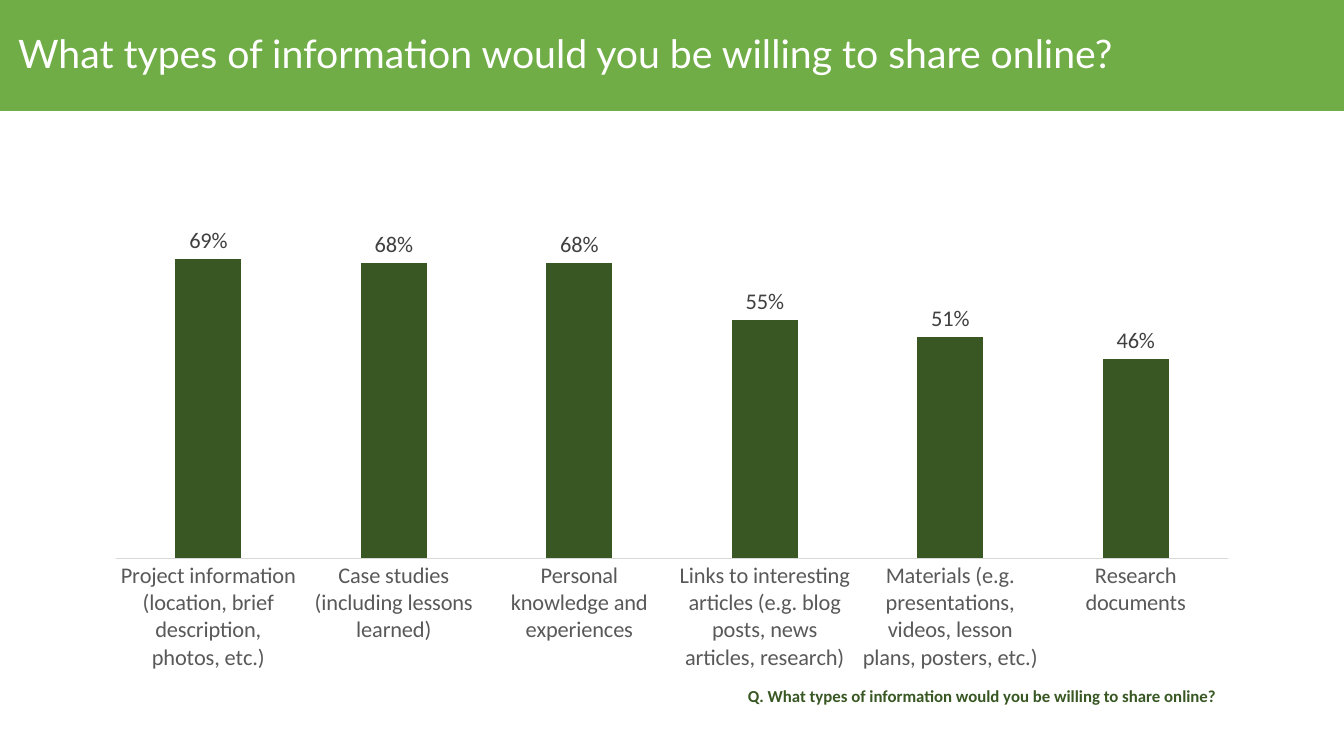
from dataclasses import dataclass

from pptx import Presentation, util as u
from pptx.chart.data import CategoryChartData
from pptx.dml.color import RGBColor
from pptx.enum import chart as charts, shapes, text

COLUMNS, ROWS = 160, 90
SLIDE_WIDTH, SLIDE_HEIGHT = u.Inches(13.33), u.Inches(7.5)


@dataclass(frozen=True)
class Theme:
    banner: RGBColor = RGBColor.from_string("70AD47")
    dark_green: RGBColor = RGBColor.from_string("385723")
    white: RGBColor = RGBColor.from_string("FFFFFF")
    black: RGBColor = RGBColor.from_string("000000")
    axis_text: RGBColor = RGBColor.from_string("595959")
    axis_line: RGBColor = RGBColor.from_string("D9D9D9")
    label_text: RGBColor = RGBColor.from_string("404040")
    title_font: str = "Lato"
    body_font: str = "Calibri"
    title_size: int = 28
    chart_size: int = 16
    note_size: int = 12


@dataclass(frozen=True)
class Area:
    column: float
    row: float
    columns: float
    rows: float

    def frame(self) -> tuple[int, int, int, int]:
        return (
            int(SLIDE_WIDTH * self.column / COLUMNS),
            int(SLIDE_HEIGHT * self.row / ROWS),
            int(SLIDE_WIDTH * self.columns / COLUMNS),
            int(SLIDE_HEIGHT * self.rows / ROWS),
        )


@dataclass(frozen=True)
class Answer:
    label: str
    share: float


THEME = Theme()
QUESTION = "What types of information would you be willing to share online?"
BANNER_AREA = Area(0, 0, 160, 13.2)
CHART_AREA = Area(11, 24, 138, 57.1)
NOTE_AREA = Area(34, 81.1, 112, 3.6)
ANSWERS = [
    Answer("Research documents", 0.46),
    Answer("Materials (e.g. presentations, videos, lesson plans, posters, etc.)", 0.51),
    Answer("Links to interesting articles (e.g. blog posts, news articles, research)", 0.55),
    Answer("Personal knowledge and experiences", 0.68),
    Answer("Case studies (including lessons learned)", 0.68),
    Answer("Project information (location, brief description, photos, etc.)", 0.69),
]


def style_font(font, name: str, size: int, color: RGBColor, bold: bool = False) -> None:
    font.name = name
    font.size = u.Pt(size)
    font.color.rgb = color
    font.bold = bold


def add_banner(page) -> None:
    box = page.shapes.add_shape(shapes.MSO_SHAPE.RECTANGLE, *BANNER_AREA.frame())
    box.shadow.inherit = False
    box.fill.solid()
    box.fill.fore_color.rgb = THEME.banner
    box.line.fill.background()
    frame = box.text_frame
    frame.word_wrap = True
    frame.vertical_anchor = text.MSO_ANCHOR.MIDDLE
    frame.margin_left = u.Inches(0.18)
    para = frame.paragraphs[0]
    para.alignment = text.PP_ALIGN.LEFT
    para.line_spacing = 0.9
    span = para.add_run()
    span.text = QUESTION
    style_font(span.font, THEME.title_font, THEME.title_size, THEME.white)


def add_answer_chart(page) -> None:
    data = CategoryChartData(number_format="0%")
    data.categories = [answer.label for answer in ANSWERS]
    data.add_series("Series 1", [answer.share for answer in ANSWERS])
    chart = page.shapes.add_chart(
        charts.XL_CHART_TYPE.COLUMN_CLUSTERED, *CHART_AREA.frame(), data
    ).chart
    chart.has_title = False
    chart.has_legend = False
    style_font(chart.font, THEME.body_font, THEME.chart_size, THEME.black)

    category_axis = chart.category_axis
    category_axis.reverse_order = True
    category_axis.major_tick_mark = charts.XL_TICK_MARK.NONE
    category_axis.format.line.color.rgb = THEME.axis_line
    category_axis.format.line.width = u.Pt(0.75)
    style_font(category_axis.tick_labels.font, THEME.body_font, THEME.chart_size, THEME.axis_text)

    value_axis = chart.value_axis
    value_axis.minimum_scale = 0
    value_axis.maximum_scale = 0.8
    value_axis.has_major_gridlines = False
    value_axis.visible = False

    plot = chart.plots[0]
    plot.gap_width = 182
    plot.vary_by_categories = False
    series = plot.series[0]
    series.format.fill.solid()
    series.format.fill.fore_color.rgb = THEME.dark_green
    labels = series.data_labels
    labels.show_value = True
    labels.position = charts.XL_LABEL_POSITION.OUTSIDE_END
    labels.number_format = "0%"
    labels.number_format_is_linked = False
    style_font(labels.font, THEME.body_font, THEME.chart_size, THEME.label_text)


def add_question_note(page) -> None:
    frame = page.shapes.add_textbox(*NOTE_AREA.frame()).text_frame
    frame.word_wrap = True
    frame.auto_size = text.MSO_AUTO_SIZE.SHAPE_TO_FIT_TEXT
    para = frame.paragraphs[0]
    para.alignment = text.PP_ALIGN.RIGHT
    span = para.add_run()
    span.text = f"Q. {QUESTION}"
    style_font(span.font, THEME.body_font, THEME.note_size, THEME.dark_green, bold=True)


def main() -> None:
    deck = Presentation()
    deck.slide_width, deck.slide_height = SLIDE_WIDTH, SLIDE_HEIGHT
    page = deck.slides.add_slide(deck.slide_layouts[6])
    add_banner(page)
    add_answer_chart(page)
    add_question_note(page)
    deck.save("out.pptx")


if __name__ == "__main__":
    main()
